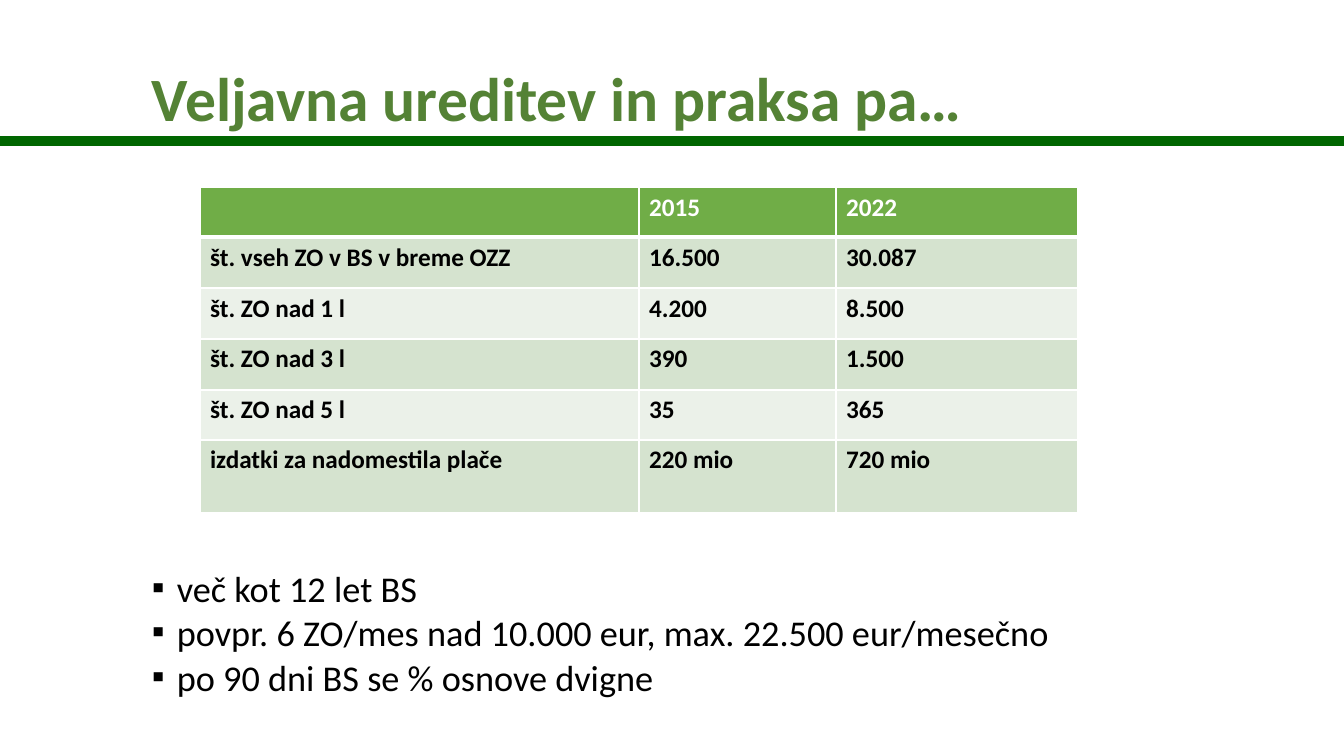
"""Build the slide comparing sick-leave figures for 2015 and 2022."""
from lxml import etree
from pptx import Presentation
from pptx.dml.color import RGBColor
from pptx.enum.shapes import MSO_CONNECTOR
from pptx.enum.text import MSO_ANCHOR
from pptx.oxml import parse_xml
from pptx.oxml.ns import nsdecls, qn
from pptx.util import Pt

STRAIGHT = MSO_CONNECTOR.STRAIGHT
TOP, BOTTOM = MSO_ANCHOR.TOP, MSO_ANCHOR.BOTTOM
colour = RGBColor.from_string


def px(length):
    return round(length * 12192000 / 1344)


def write(frame, lines, size, ink, bold=False, anchor=TOP, spacing=1.0, gap=0, bullet=None):
    frame.word_wrap = True
    frame.vertical_anchor = anchor
    for index, line in enumerate(lines):
        paragraph = frame.paragraphs[0] if index == 0 else frame.add_paragraph()
        paragraph.line_spacing = spacing
        paragraph.space_before = Pt(gap if index else 0)
        if bullet:
            properties = paragraph._p.get_or_add_pPr()
            properties.set("marL", str(px(25)))
            properties.set("indent", str(px(-25)))
            etree.SubElement(properties, qn("a:buFont")).set("typeface", "Arial")
            etree.SubElement(properties, qn("a:buChar")).set("char", bullet)
        paragraph.font.size = Pt(size)
        run = paragraph.add_run()
        run.text = line
        run.font.name = "Calibri"
        run.font.size = Pt(size)
        run.font.bold = bold
        run.font.color.rgb = colour(ink)


deck = Presentation()
deck.slide_width, deck.slide_height = px(1344), px(756)
slide = deck.slides.add_slide(deck.slide_layouts[6])

rule = slide.shapes.add_connector(STRAIGHT, 0, px(141), px(1344), px(141))
rule.line.color.rgb = colour("006600")
rule.line.width = Pt(7)
etree.SubElement(rule._element.spPr, qn("a:effectLst"))

title = slide.shapes.add_textbox(px(142), px(15), px(1110), px(125))
write(title.text_frame, ["Veljavna ureditev in praksa pa…"], size=44, ink="548235",
      bold=True, anchor=BOTTOM, spacing=0.9)

figures = [
    ("", "2015", "2022"),
    ("št. vseh ZO v BS v breme OZZ", "16.500", "30.087"),
    ("št. ZO nad 1 l", "4.200", "8.500"),
    ("št. ZO nad 3 l", "390", "1.500"),
    ("št. ZO nad 5 l", "35", "365"),
    ("izdatki za nadomestila plače", "220 mio", "720 mio"),
]
column_widths = [439, 197, 242]
row_heights = [50, 51, 51, 51, 50, 73]
table = slide.shapes.add_table(len(figures), len(column_widths), px(200), px(187),
                               px(sum(column_widths)), px(sum(row_heights))).table
for column, width in zip(table.columns, column_widths):
    column.width = px(width)
for row, height in zip(table.rows, row_heights):
    row.height = px(height)

for r, values in enumerate(figures):
    header = r == 0
    band = "70AD47" if header else "D5E3CF" if r % 2 else "EBF1E9"
    for c, value in enumerate(values):
        cell = table.cell(r, c)
        for side in ("lnL", "lnR", "lnT", "lnB"):
            thick = (header and side == "lnB") or (r == 1 and side == "lnT")
            cell._tc.get_or_add_tcPr().append(parse_xml(
                f'<a:{side} {nsdecls("a")} w="{Pt(3 if thick else 1)}"><a:solidFill>'
                f'<a:srgbClr val="FFFFFF"/></a:solidFill></a:{side}>'))
        cell.fill.solid()
        cell.fill.fore_color.rgb = colour(band)
        write(cell.text_frame, [value], size=18, bold=True,
              ink="FFFFFF" if header else "000000")

remarks = slide.shapes.add_textbox(px(142), px(573), px(1110), px(156))
write(remarks.text_frame, [
    "več kot 12 let BS",
    "povpr. 6 ZO/mes nad 10.000 eur, max. 22.500 eur/mesečno",
    "po 90 dni BS se % osnove dvigne",
], size=25.9, ink="000000", spacing=0.7, gap=10, bullet="▪")

deck.save("out.pptx")
